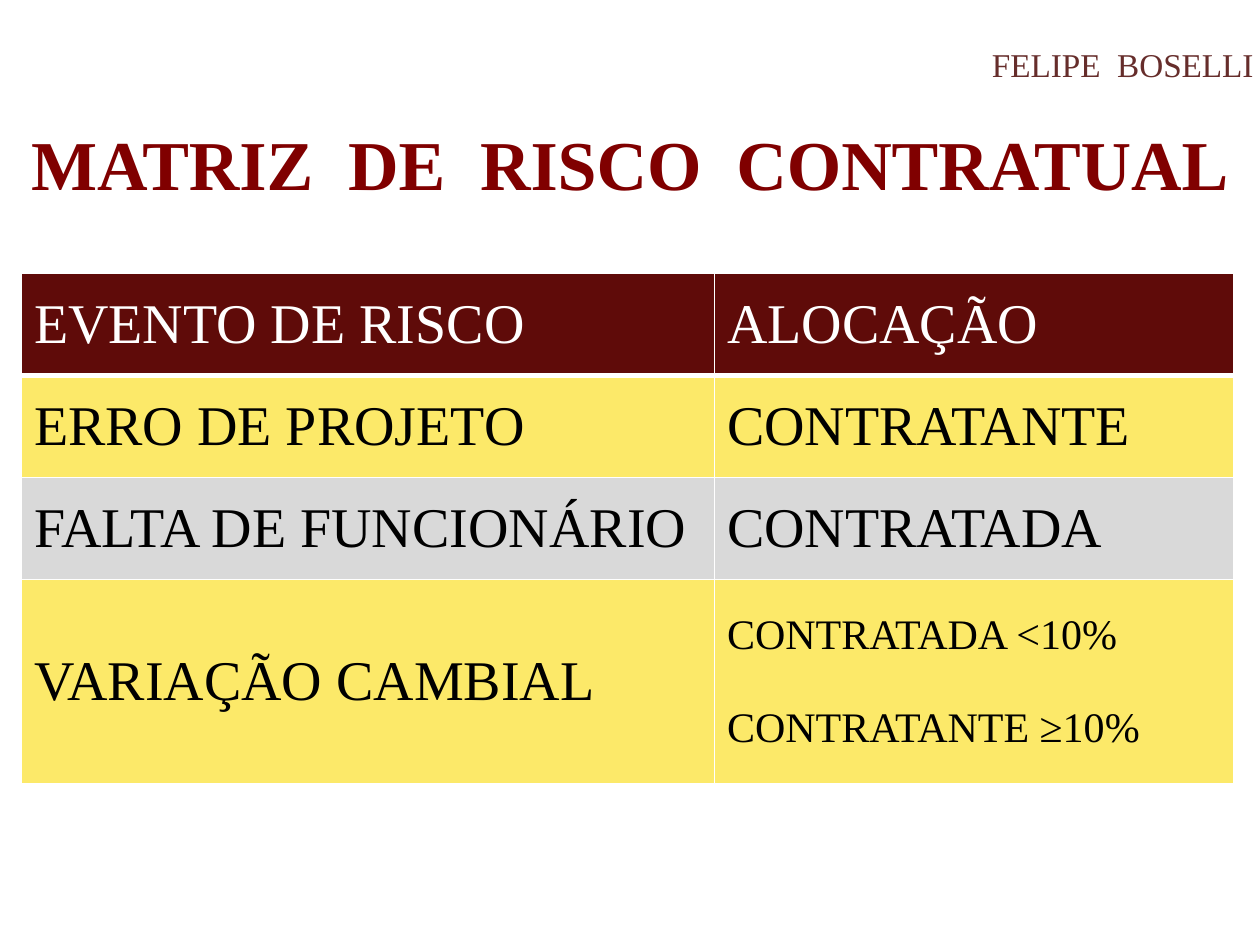
"""Build the contractual risk matrix slide."""
from dataclasses import dataclass

import pptx
import pptx.dml.color
import pptx.enum.text
import pptx.oxml
import pptx.oxml.ns
import pptx.util
from pptx.util import Inches

RGBColor = pptx.dml.color.RGBColor
ALIGN = pptx.enum.text.PP_ALIGN
ANCHOR = pptx.enum.text.MSO_ANCHOR

FONT = "Times New Roman"
WHITE = RGBColor(0xFF, 0xFF, 0xFF)
BLACK = RGBColor(0x00, 0x00, 0x00)
MAROON = RGBColor(0x80, 0x00, 0x00)
BROWN = RGBColor(0x66, 0x2D, 0x2B)
HEADER = RGBColor(0x5F, 0x0B, 0x09)
YELLOW = RGBColor(0xFC, 0xE9, 0x69)
GRAY = RGBColor(0xD9, 0xD9, 0xD9)


@dataclass
class RiskRow:
    event: str
    allocation: list[str]
    fill: RGBColor
    color: RGBColor = BLACK
    height: float = 0.81
    bottom: float = 1


ROWS = [
    RiskRow("EVENTO DE RISCO", ["ALOCAÇÃO"], HEADER, WHITE, bottom=3),
    RiskRow("ERRO DE PROJETO", ["CONTRATANTE"], YELLOW),
    RiskRow("FALTA DE FUNCIONÁRIO", ["CONTRATADA"], GRAY),
    RiskRow("VARIAÇÃO CAMBIAL", ["CONTRATADA <10%", "CONTRATANTE ≥10%"],
            YELLOW, height=1.62),
]
COL_WIDTHS = [5.5, 4.12]


def add_run(p, text: str, size: float, color: RGBColor, bold: bool = False) -> None:
    """Append one formatted run to a paragraph."""
    r = p.add_run()
    r.text = text
    r.font.name = FONT
    r.font.size = pptx.util.Pt(size)
    r.font.bold = bold
    r.font.color.rgb = color


def set_frame(tf, margin_x: float, margin_y: float) -> None:
    """Set the insets and fit of a text frame."""
    tf.word_wrap = True
    tf.auto_size = pptx.enum.text.MSO_AUTO_SIZE.NONE
    tf.vertical_anchor = ANCHOR.BOTTOM
    tf.margin_left = tf.margin_right = Inches(margin_x)
    tf.margin_top = tf.margin_bottom = Inches(margin_y)


def set_borders(cell, color: RGBColor, bottom: float) -> None:
    """Draw solid lines on the four sides of a cell."""
    tcPr = cell._tc.get_or_add_tcPr()
    ns = pptx.oxml.ns.nsdecls("a")
    widths = {"lnL": 1, "lnR": 1, "lnT": 1, "lnB": bottom}
    for i, (tag, width) in enumerate(widths.items()):
        tcPr.insert(i, pptx.oxml.parse_xml(
            f'<a:{tag} {ns} w="{pptx.util.Pt(width)}"><a:solidFill>'
            f'<a:srgbClr val="{color}"/></a:solidFill></a:{tag}>'))


def fill_cell(cell, lines: list[str], row: RiskRow) -> None:
    """Write the lines of a cell and colour it."""
    cell.fill.solid()
    cell.fill.fore_color.rgb = row.fill
    cell.vertical_anchor = ANCHOR.MIDDLE
    set_borders(cell, WHITE, row.bottom)
    tf = cell.text_frame
    size = 32 if len(lines) == 1 else 24
    for i, line in enumerate(lines):
        p = tf.add_paragraph() if i else tf.paragraphs[0]
        if i:
            p.space_before = pptx.util.Pt(26.5)
        add_run(p, line, size, row.color)


def add_matrix(s, rows: list[RiskRow]) -> None:
    """Add the risk table."""
    table = s.shapes.add_table(
        len(rows), len(COL_WIDTHS), Inches(0.17), Inches(2.17),
        Inches(sum(COL_WIDTHS)), Inches(sum(row.height for row in rows))).table
    for column, width in zip(table.columns, COL_WIDTHS):
        column.width = Inches(width)
    for i, row in enumerate(rows):
        table.rows[i].height = Inches(row.height)
        fill_cell(table.cell(i, 0), [row.event], row)
        fill_cell(table.cell(i, 1), row.allocation, row)


def main() -> None:
    """Build and save the slide."""
    prs = pptx.Presentation()
    prs.slide_width, prs.slide_height = Inches(10), Inches(7.5)
    s = prs.slides.add_slide(prs.slide_layouts[5])

    sp = s.shapes.title
    sp.left, sp.top = Inches(0), Inches(0.9)
    sp.width, sp.height = Inches(10), Inches(0.77)
    set_frame(sp.text_frame, 0.1, 0.05)
    p = sp.text_frame.paragraphs[0]
    p.alignment = ALIGN.CENTER
    add_run(p, "MATRIZ  DE  RISCO  CONTRATUAL", 40, MAROON, True)

    sp = s.shapes.add_textbox(Inches(7.62), Inches(0.35), Inches(2.33), Inches(0.32))
    set_frame(sp.text_frame, 0, 0)
    p = sp.text_frame.paragraphs[0]
    p.alignment = ALIGN.RIGHT
    add_run(p, "FELIPE  BOSELLI", 19, BROWN)

    add_matrix(s, ROWS)
    prs.save("out.pptx")


if __name__ == "__main__":
    main()
